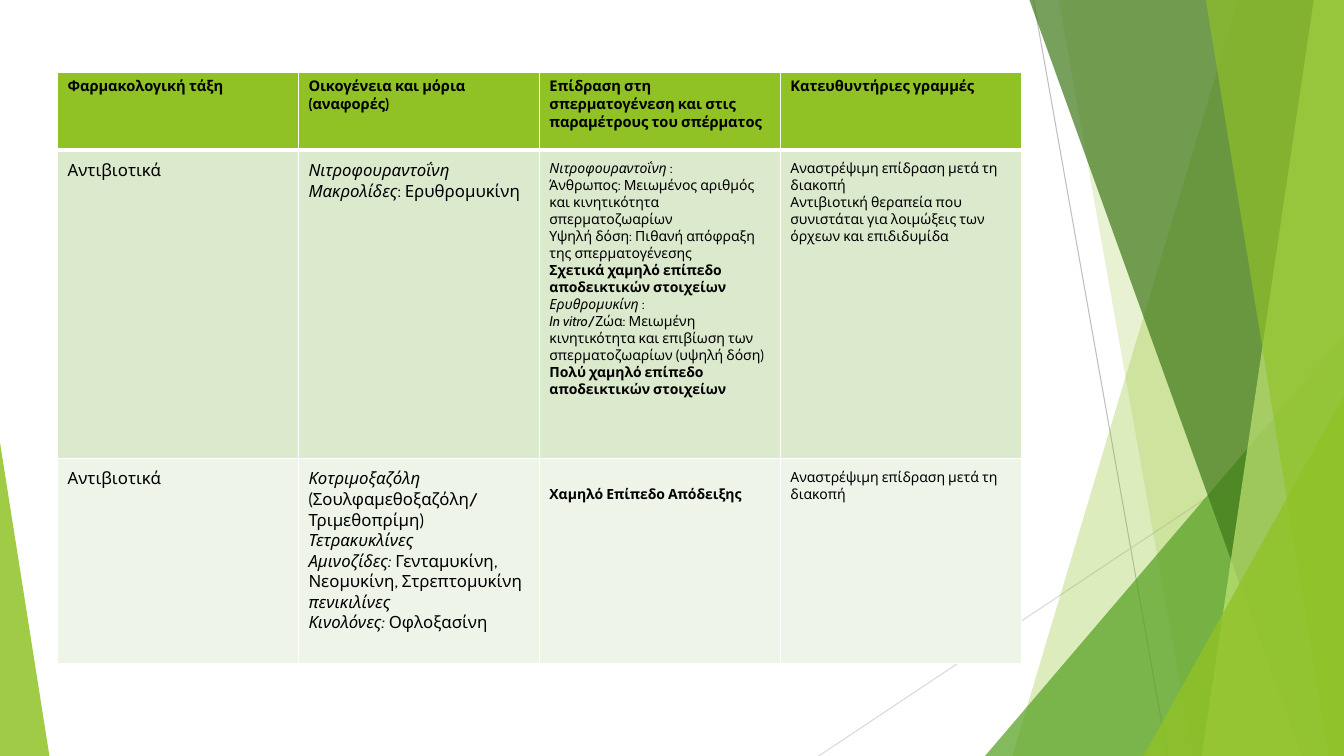
from lxml.etree import SubElement
from pptx import Presentation
from pptx.dml.color import RGBColor
from pptx.enum.shapes import MSO_CONNECTOR, MSO_SHAPE
from pptx.oxml import parse_xml
from pptx.oxml.ns import nsdecls, qn
from pptx.util import Inches, Pt

COLORS = {
    "white": "FFFFFF", "black": "000000", "lime": "90C226", "green": "54A021",
    "forest": "3F7819", "pale": "C0E474", "band_dark": "DBE9CD",
    "band_light": "EEF4E8", "gray": "BFBFBF", "silver": "D9D9D9",
}
WIDTH, HEIGHT = 13.33, 7.5
FONT = "Cabin"

HEADINGS = [
    "Φαρμακολογική τάξη",
    "Οικογένεια και μόρια (αναφορές)",
    "Επίδραση στη σπερματογένεση και στις παραμέτρους του σπέρματος",
    "Κατευθυντήριες γραμμές",
]
CLASS_NAME = [[("Αντιβιοτικά", "")]]
REVERSIBLE = [("Αναστρέψιμη επίδραση μετά τη διακοπή", "")]
FIRST_ROW = [
    CLASS_NAME,
    [
        [("Νιτροφουραντοΐνη", "i")],
        [("Μακρολίδες", "i"), (": Ερυθρομυκίνη", "")],
    ],
    [
        [("Νιτροφουραντοΐνη", "i"), (" :", "")],
        [("Άνθρωπος: Μειωμένος αριθμός και κινητικότητα σπερματοζωαρίων", "")],
        [("Υψηλή δόση: Πιθανή απόφραξη της σπερματογένεσης", "")],
        [("Σχετικά χαμηλό επίπεδο αποδεικτικών στοιχείων", "b")],
        [("Ερυθρομυκίνη", "i"), (" :", "")],
        [("In vitro", "i"),
         ("/Ζώα: Μειωμένη κινητικότητα και επιβίωση των σπερματοζωαρίων (υψηλή δόση)", "")],
        [("Πολύ χαμηλό επίπεδο αποδεικτικών στοιχείων", "b")],
    ],
    [
        REVERSIBLE,
        [("Αντιβιοτική θεραπεία που συνιστάται για λοιμώξεις των όρχεων και επιδιδυμίδα", "")],
    ],
]
SECOND_ROW = [
    CLASS_NAME,
    [
        [("Κοτριμοξαζόλη", "i")],
        [("(Σουλφαμεθοξαζόλη/Τριμεθοπρίμη)", "")],
        [("Τετρακυκλίνες", "i")],
        [("Αμινοζίδες: ", "i"), ("Γενταμυκίνη, Νεομυκίνη, Στρεπτομυκίνη", "")],
        [("πενικιλίνες", "i")],
        [("Κινολόνες: ", "i"), ("Οφλοξασίνη", "")],
    ],
    [[("Χαμηλό Επίπεδο Απόδειξης", "b")]],
    [REVERSIBLE],
]


class SlideBuilder:
    """Holds the style and the current slide."""

    def __init__(self, slide):
        self.slide = slide
        self.shapes = slide.shapes

    def line(self, start, end, color):
        """Draw a thin straight line."""
        connector = self.shapes.add_connector(
            MSO_CONNECTOR.STRAIGHT, *map(Inches, start + end))
        connector.line.color.rgb = RGBColor.from_string(COLORS[color])
        connector.line.width = Pt(0.75)
        SubElement(connector._element.spPr, qn("a:effectLst"))

    def paint(self, shape, color, opacity):
        """Give a shape a translucent fill and no outline."""
        shape.shadow.inherit = False
        shape.line.fill.background()
        shape.fill.solid()
        shape.fill.fore_color.rgb = RGBColor.from_string(COLORS[color])
        tint = shape._element.spPr.find(qn("a:solidFill"))[0]
        SubElement(tint, qn("a:alpha"), val=str(opacity * 1000))

    def band(self, top_x, bottom_x, color, opacity):
        """Fill the area from a slanted edge to the right side of the slide."""
        outline = self.shapes.build_freeform(Inches(top_x), 0)
        corners = [(WIDTH, 0), (WIDTH, HEIGHT), (bottom_x, HEIGHT)]
        outline.add_line_segments([(Inches(x), Inches(y)) for x, y in corners])
        self.paint(outline.convert_to_shape(), color, opacity)

    def triangle(self, left, top, width, apex, color, opacity):
        """Draw a triangle standing on the bottom edge of the slide."""
        shape = self.shapes.add_shape(
            MSO_SHAPE.ISOSCELES_TRIANGLE,
            *map(Inches, (left, top, width, HEIGHT - top)))
        shape.adjustments[0] = apex
        self.paint(shape, color, opacity)

    def table(self, left, top, widths, heights):
        """Add an empty table with the given columns and rows."""
        frame = self.shapes.add_table(
            len(heights), len(widths),
            *map(Inches, (left, top, sum(widths), sum(heights))))
        for column, width in zip(frame.table.columns, widths):
            column.width = Inches(width)
        for row, height in zip(frame.table.rows, heights):
            row.height = Inches(height)
        return frame.table

    def cell(self, cell, paragraphs, size, fill, top=0.1, above=1, below=1):
        """Fill, border and write one table cell."""
        cell.margin_left = cell.margin_right = Inches(0.1)
        cell.margin_top, cell.margin_bottom = Inches(top), Inches(0.05)
        cell.fill.solid()
        cell.fill.fore_color.rgb = RGBColor.from_string(COLORS[fill])
        properties = cell._tc.get_or_add_tcPr()
        borders = [("L", 1), ("R", 1), ("T", above), ("B", below)]
        for position, (side, points) in enumerate(borders):
            properties.insert(position, parse_xml(
                f'<a:ln{side} {nsdecls("a")} w="{Pt(points)}"><a:solidFill>'
                f'<a:srgbClr val="{COLORS["white"]}"/></a:solidFill></a:ln{side}>'))
        for index, spans in enumerate(paragraphs):
            frame = cell.text_frame
            para = frame.add_paragraph() if index else frame.paragraphs[0]
            for text, style in spans:
                span = para.add_run()
                span.text = text
                span.font.name = FONT
                span.font.size = Pt(size)
                span.font.bold = style == "b"
                span.font.italic = style == "i"
                span.font.color.rgb = RGBColor.from_string(COLORS["black"])


def main():
    """Build the slide and save the deck."""
    deck = Presentation()
    deck.slide_width, deck.slide_height = Inches(WIDTH), Inches(HEIGHT)
    page = SlideBuilder(deck.slides.add_slide(deck.slide_layouts[6]))

    page.line((10.25, 0), (11.58, HEIGHT), "gray")
    page.line((WIDTH, 4.03), (8.12, HEIGHT), "silver")
    page.band(12.28, 10.04, "lime", 30)
    page.band(10.5, 11.83, "lime", 20)
    page.triangle(9.77, 3.33, 3.56, 1, "green", 72)
    page.band(10.21, 12.91, "forest", 70)
    page.band(13.03, 11.92, "pale", 70)
    page.band(11.96, 13.18, "lime", 65)
    page.triangle(11.34, 3.93, 1.99, 1, "lime", 80)
    page.triangle(0, 4.39, 0.49, 0, "lime", 85)

    table = page.table(0.57, 0.72, [2.39] * 4, [0.77, 3.06, 2.03])
    for column, heading in enumerate(HEADINGS):
        page.cell(table.cell(0, column), [[(heading, "b")]], 10.5, "lime",
                  top=0.05, below=3)
    sizes = [12, 12, 10, 10]
    for column, size in enumerate(sizes):
        page.cell(table.cell(1, column), FIRST_ROW[column], size, "band_dark", above=3)
        page.cell(table.cell(2, column), SECOND_ROW[column], size, "band_light",
                  top=0.27 if column == 2 else 0.1)
    deck.save("out.pptx")


if __name__ == "__main__":
    main()
